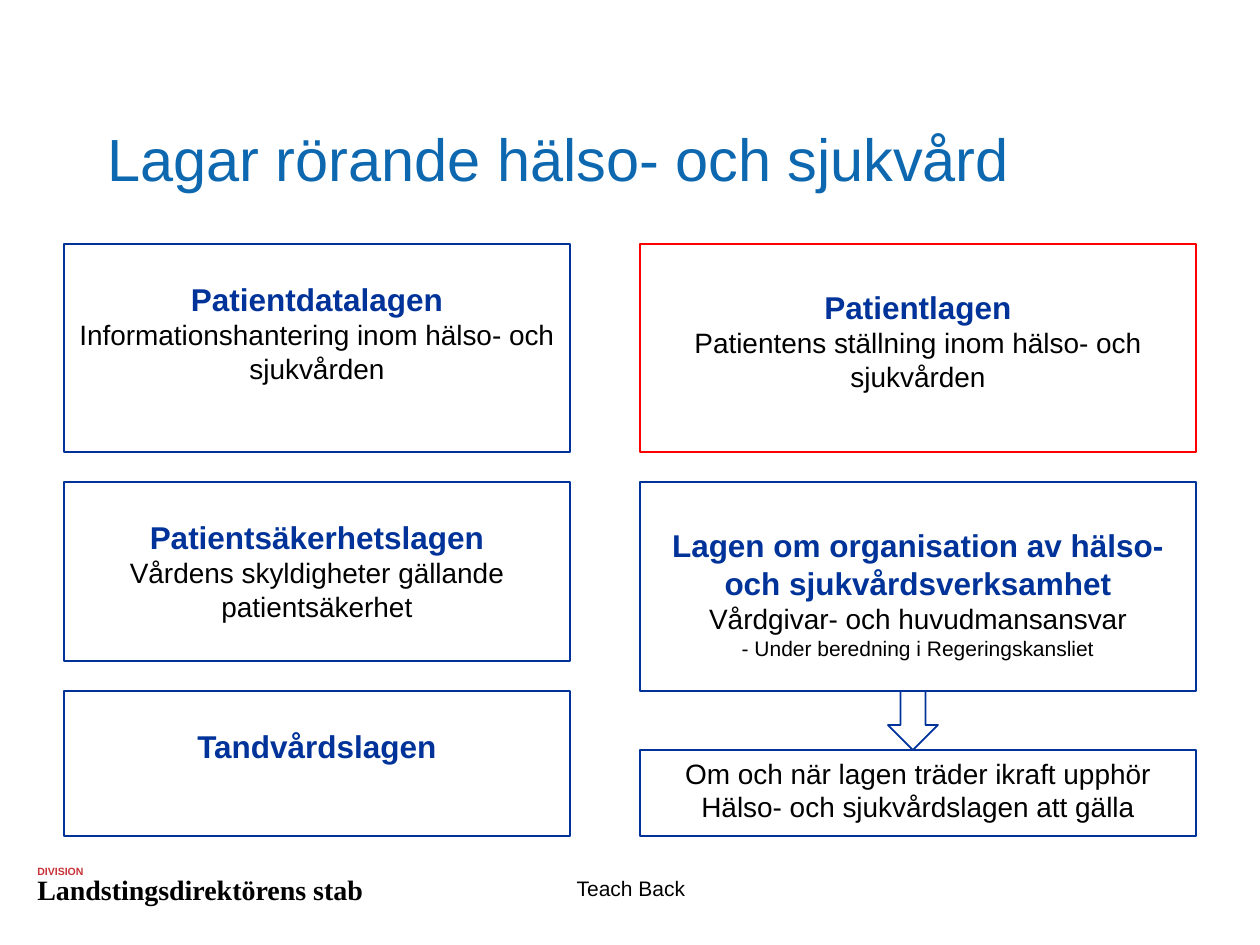
from dataclasses import dataclass

from pptx import Presentation
from pptx import util as u
from pptx.dml.color import RGBColor
from pptx.enum import shapes, text

PX = 914400 / 126


@dataclass(frozen=True)
class Theme:
    font: str = "Arial"
    serif: str = "Times New Roman"
    title: str = "0D68B0"
    law: str = "003399"
    highlight: str = "FF0000"
    division: str = "C73238"
    ink: str = "000000"
    paper: str = "FFFFFF"
    title_size: int = 34
    law_size: int = 18
    body_size: int = 16
    small_size: int = 12
    division_size: int = 6


THEME = Theme()

# Content: paragraphs are (style, wording)
STYLES = {
    "law": (THEME.font, THEME.law_size, THEME.law, True),
    "body": (THEME.font, THEME.body_size, THEME.ink, False),
    "small": (THEME.font, THEME.small_size, THEME.ink, False),
    "title": (THEME.font, THEME.title_size, THEME.title, False),
    "division": (THEME.font, THEME.division_size, THEME.division, True),
    "office": (THEME.serif, THEME.body_size, THEME.ink, True),
}
TITLE = "Lagar rörande hälso- och sjukvård"

# Each column: left, width, inset above a law's name, boxes
# Each box: top, height, line colour, paragraphs
COLUMNS = [
    (64, 506, 36, [
        (244, 208, THEME.law, [
            ("law", "Patientdatalagen"),
            ("body", "Informationshantering inom hälso- och sjukvården")]),
        (482, 179, THEME.law, [
            ("law", "Patientsäkerhetslagen"),
            ("body", "Vårdens skyldigheter gällande patientsäkerhet")]),
        (691, 145, THEME.law, [("law", "Tandvårdslagen")]),
    ]),
    (640, 556, 44, [
        (244, 208, THEME.highlight, [
            ("law", "Patientlagen"),
            ("body", "Patientens ställning inom hälso- och sjukvården")]),
        (482, 209, THEME.law, [
            ("law", "Lagen om organisation av hälso- och sjukvårdsverksamhet"),
            ("body", "Vårdgivar- och huvudmansansvar"),
            ("small", "- Under beredning i Regeringskansliet")]),
        (750, 86, THEME.law, [
            ("body", "Om och när lagen träder ikraft upphör "
                     "Hälso- och sjukvårdslagen att gälla")]),
    ]),
]
ARROW = (888, 691, 50, 59)

# Footer: place, style, wording, alignment
FOOTER = [
    ((25, 859, 73, 38), "division", "DIVISION", text.PP_ALIGN.LEFT),
    ((25, 866, 375, 49), "office", "Landstingsdirektörens stab",
     text.PP_ALIGN.LEFT),
    ((431, 869, 400, 66), "small", "Teach Back", text.PP_ALIGN.CENTER),
]


def emu(*lengths):
    return [u.Emu(round(length * PX)) for length in lengths]


def write(frame, paragraphs, align):
    frame.word_wrap = True
    for index, (style, wording) in enumerate(paragraphs):
        para = frame.paragraphs[0] if index == 0 else frame.add_paragraph()
        para.text = wording
        para.alignment = align
        font = para.font
        font.name, size, color, font.bold = STYLES[style]
        font.size = u.Pt(size)
        font.color.rgb = RGBColor.from_string(color)


def add_outlined(slide, kind, place, color):
    shape = slide.shapes.add_shape(kind, *emu(*place))
    shape.shadow.inherit = False
    shape.fill.solid()
    shape.fill.fore_color.rgb = RGBColor.from_string(THEME.paper)
    shape.line.color.rgb = RGBColor.from_string(color)
    shape.line.width = u.Pt(1)
    return shape


def main():
    deck = Presentation()
    deck.slide_width, deck.slide_height = emu(1260, 945)
    slide = deck.slides.add_slide(deck.slide_layouts[5])

    # Title
    title = slide.shapes.title
    title.left, title.top, title.width, title.height = emu(95, 79, 1071, 158)
    title.text_frame.auto_size = text.MSO_AUTO_SIZE.NONE
    title.text_frame.vertical_anchor = text.MSO_ANCHOR.MIDDLE
    write(title.text_frame, [("title", TITLE)], text.PP_ALIGN.LEFT)

    # Law boxes
    for left, width, law_inset, boxes in COLUMNS:
        for top, height, color, paragraphs in boxes:
            box = add_outlined(slide, shapes.MSO_SHAPE.RECTANGLE,
                               (left, top, width, height), color)
            frame = box.text_frame
            frame.vertical_anchor = text.MSO_ANCHOR.TOP
            if paragraphs[0][0] == "law":
                frame.margin_top, = emu(law_inset)
            write(frame, paragraphs, text.PP_ALIGN.CENTER)

    # Arrow to the consequence
    add_outlined(slide, shapes.MSO_SHAPE.DOWN_ARROW, ARROW, THEME.law)

    # Footer
    for place, style, wording, align in FOOTER:
        box = slide.shapes.add_textbox(*emu(*place))
        write(box.text_frame, [(style, wording)], align)

    deck.save("out.pptx")


if __name__ == "__main__":
    main()
